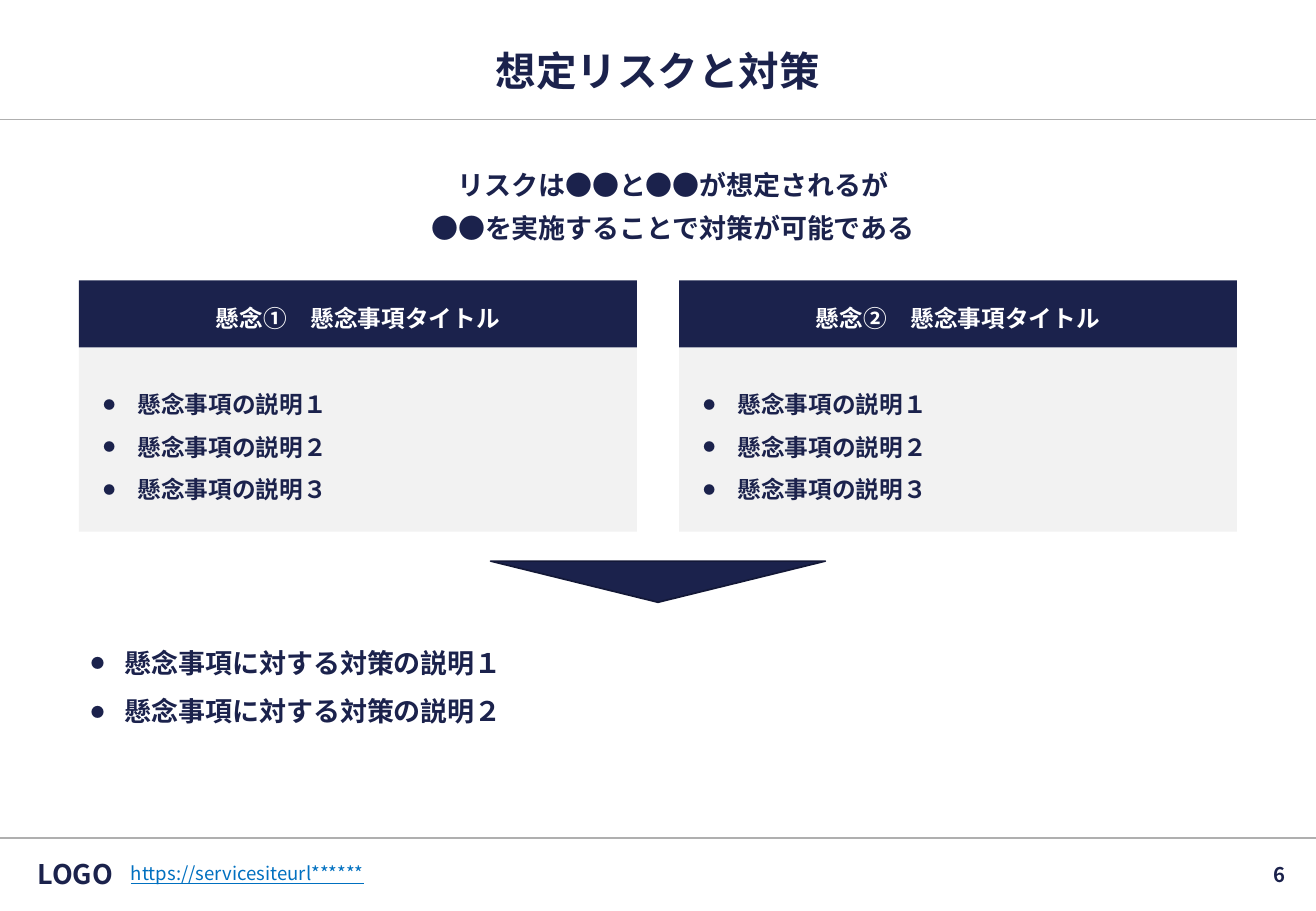
"""Builds the slide on assumed risks and countermeasures."""
from dataclasses import dataclass

from lxml import etree
from pptx import Presentation
from pptx.dml.color import RGBColor
from pptx.enum.shapes import MSO_CONNECTOR, MSO_SHAPE
from pptx.enum.text import MSO_ANCHOR, MSO_AUTO_SIZE, PP_ALIGN
from pptx.oxml.ns import qn
from pptx.util import Pt

LEFT, CENTER, RIGHT = PP_ALIGN.LEFT, PP_ALIGN.CENTER, PP_ALIGN.RIGHT
TOP, MIDDLE = MSO_ANCHOR.TOP, MSO_ANCHOR.MIDDLE
NO_AUTOFIT = MSO_AUTO_SIZE.NONE
RECTANGLE, TRIANGLE = MSO_SHAPE.RECTANGLE, MSO_SHAPE.ISOSCELES_TRIANGLE
STRAIGHT = MSO_CONNECTOR.STRAIGHT

WIDTH, HEIGHT = 779.8, 540
MARGIN, CONTENT_WIDTH = 46.8, 686.2
CARD_WIDTH, CARD_STEP = 330.6, 355.6
HEADER_TOP, HEADER_HEIGHT, BODY_HEIGHT = 166.2, 39.8, 109.2
SNUG = (3, 3, 3, 3)
STANDARD = (7.2, 3.6, 7.2, 3.6)


@dataclass(frozen=True)
class Theme:
    """Colours, font and type sizes of the slide."""
    font: str = "Noto Sans CJK JP"
    navy: str = "1B224C"
    edge: str = "131837"
    panel: str = "F2F2F2"
    rule: str = "AFAFAF"
    link: str = "0070C0"
    white: str = "FFFFFF"
    title: int = 24
    lead: int = 16
    body: int = 14
    page: int = 12
    small: int = 11


class SlideBuilder:
    """Draws styled elements on the current slide."""

    def __init__(self, slide, theme):
        self.slide = slide
        self.theme = theme

    def fill_text(self, frame, lines, size, color=None, align=LEFT, anchor=TOP,
                  insets=STANDARD, spacing=1.0, indent=None, bullet=False, bold=True,
                  underline=False):
        """Fills a text frame with one formatted paragraph per line."""
        left, top, right, bottom = map(Pt, insets)
        frame_format = {"word_wrap": True, "auto_size": NO_AUTOFIT, "vertical_anchor": anchor,
                        "margin_left": left, "margin_top": top,
                        "margin_right": right, "margin_bottom": bottom}
        for name, value in frame_format.items():
            setattr(frame, name, value)
        paragraph_format = {"alignment": align, "line_spacing": spacing,
                            "space_before": Pt(0), "space_after": Pt(0)}
        font_format = {"size": Pt(size), "name": self.theme.font,
                       "bold": bold, "underline": underline}
        for number, line in enumerate(lines):
            paragraph = frame.add_paragraph() if number else frame.paragraphs[0]
            for name, value in paragraph_format.items():
                setattr(paragraph, name, value)
            if indent:
                properties = paragraph.font._element.getparent()
                properties.set("marL", str(Pt(indent[0])))
                properties.set("indent", str(Pt(indent[1])))
            if bullet:
                self.add_bullet(paragraph)
            run = paragraph.add_run()
            run.text = line
            for name, value in font_format.items():
                setattr(run.font, name, value)
            run.font.color.rgb = RGBColor.from_string(color or self.theme.navy)
            etree.SubElement(run.font._element, qn("a:ea"), typeface=self.theme.font)

    def add_bullet(self, paragraph):
        """Puts a small round bullet before a paragraph."""
        default_run = paragraph.font._element
        color = etree.Element(qn("a:buClr"))
        etree.SubElement(color, qn("a:srgbClr"), val=self.theme.navy)
        default_run.addprevious(color)
        for tag, attributes in (("a:buSzPct", {"val": "50000"}),
                                ("a:buFont", {"typeface": self.theme.font}),
                                ("a:buChar", {"char": "●"})):
            default_run.addprevious(etree.Element(qn(tag), attributes))

    def title(self, box, text, **style):
        """Places and formats the title placeholder."""
        heading = self.slide.shapes.title
        for name, value in zip(("left", "top", "width", "height"), box):
            setattr(heading, name, Pt(value))
        self.fill_text(heading.text_frame, [text], self.theme.title, **style)

    def text(self, box, lines, size, **style):
        """Adds a text box."""
        label = self.slide.shapes.add_textbox(*map(Pt, box))
        self.fill_text(label.text_frame, lines, size, **style)

    def shape(self, kind, box, fill, edge=None):
        """Adds a filled preset shape."""
        figure = self.slide.shapes.add_shape(kind, *map(Pt, box))
        figure.shadow.inherit = False
        figure.fill.solid()
        figure.fill.fore_color.rgb = RGBColor.from_string(fill)
        if edge:
            figure.line.color.rgb = RGBColor.from_string(edge)
            figure.line.width = Pt(1)
        else:
            figure.line.fill.background()
        return figure

    def panel(self, box, fill, lines, **style):
        """Adds a rectangle that holds text."""
        figure = self.shape(RECTANGLE, box, fill)
        self.fill_text(figure.text_frame, lines, self.theme.body, anchor=MIDDLE, **style)

    def rule(self, y):
        """Adds a thin line across the slide."""
        line = self.slide.shapes.add_connector(STRAIGHT, 0, Pt(y), Pt(WIDTH), Pt(y))
        line.line.color.rgb = RGBColor.from_string(self.theme.rule)
        line.line.width = Pt(0.75)
        etree.SubElement(line._element.spPr, qn("a:effectLst"))


def main():
    """Builds and saves the slide."""
    deck = Presentation()
    deck.slide_width, deck.slide_height = Pt(WIDTH), Pt(HEIGHT)
    theme = Theme()
    builder = SlideBuilder(deck.slides.add_slide(deck.slide_layouts[5]), theme)

    for y in (70.7, 496.8):
        builder.rule(y)
    builder.title((MARGIN, 28, CONTENT_WIDTH, 28), "想定リスクと対策", align=CENTER,
                  anchor=MIDDLE, insets=(3, 6, 3, 3), spacing=0.9)
    builder.text((MARGIN, 91.4, CONTENT_WIDTH, 56.2),
                 ["リスクは●●と●●が想定されるが", "●●を実施することで対策が可能である"],
                 theme.lead, align=CENTER, insets=SNUG, spacing=1.3, indent=(36, -18))

    concerns = [f"懸念事項の説明{digit}" for digit in "１２３"]
    bullets = {"spacing": 1.5, "indent": (20.2, -20.2), "bullet": True}
    for column, number in enumerate("①②"):
        left = MARGIN + column * CARD_STEP
        builder.panel((left, HEADER_TOP + HEADER_HEIGHT, CARD_WIDTH, BODY_HEIGHT),
                      theme.panel, concerns, insets=(14.4, 3, 3, 3), **bullets)
        builder.panel((left, HEADER_TOP, CARD_WIDTH, HEADER_HEIGHT), theme.navy,
                      [f"懸念{number}　懸念事項タイトル"], color=theme.white,
                      align=CENTER, spacing=1.3)

    arrow = builder.shape(TRIANGLE, (290.7, 332.6, 198.4, 24.4), theme.navy, theme.edge)
    arrow.rotation = 180
    builder.text((MARGIN, 370.1, CONTENT_WIDTH, 62.6),
                 [f"懸念事項に対する対策の説明{digit}" for digit in "１２"],
                 theme.lead, **bullets)

    builder.text((15.1, 504, 59, 28), ["LOGO"], theme.lead, align=CENTER,
                 anchor=MIDDLE, insets=SNUG)
    builder.text((74.6, 508.2, 414, 18.7), ["https://servicesiteurl******"], theme.small,
                 color=theme.link, insets=SNUG, bold=False, underline=True)
    builder.text((593.3, 504.6, 175.7, 28), ["6"], theme.page, align=RIGHT, anchor=MIDDLE)
    deck.save("out.pptx")


if __name__ == "__main__":
    main()
